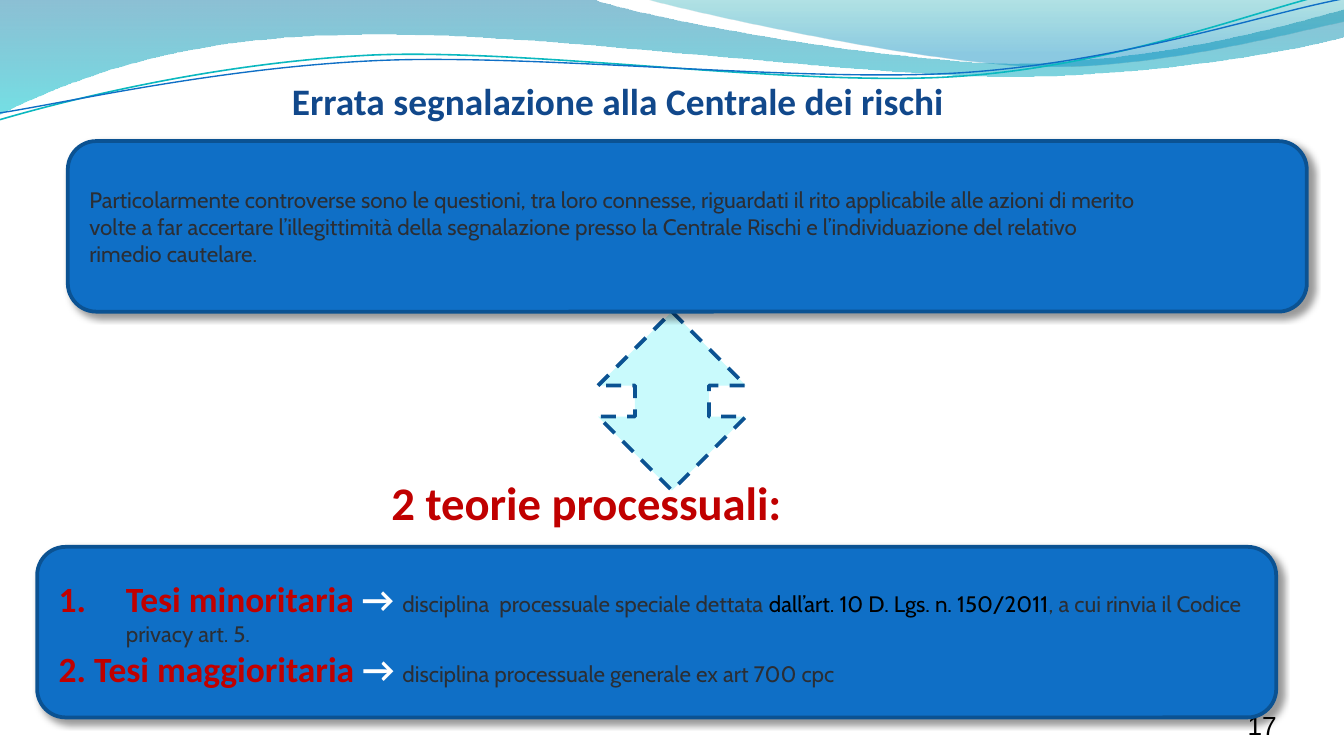
from lxml.etree import SubElement
from pptx import Presentation
from pptx.dml.color import RGBColor
from pptx.enum.dml import MSO_LINE
from pptx.enum.shapes import MSO_SHAPE
from pptx.enum.text import MSO_ANCHOR, PP_ALIGN
from pptx.oxml.ns import qn
from pptx.util import Pt

BLUE, NAVY, RED, GREY = "0F6FC6", "0B5292", "C00000", "2B2E34"
WHITE, BLACK = "FFFFFF", "000000"
WAVES = [
    ([(0, 0), (316.8, -0.7),
      (342.7, 9.4, 478.1, 33.8, 545.8, 33.8), (614.2, 33.8, 689.8, 13.7, 720, 5),
      (720.7, 19.4), (707.8, 23.8, 626.4, 41, 537.1, 41),
      (447.8, 40.3, 275, 15.1, 185, 18.7), (92.9, 19.4, 33.1, 44.6, -0.7, 61.2),
      (0, 0)],
     [(0, "0074A1", 45), (1, "00C6CF", 55)]),
    ([(344.9, -0.7), (366.5, 5.8, 491, 33.1, 553.7, 35.3),
      (616.3, 37.4, 691.9, 17.3, 720, 11.5), (720, 0), (344.9, -0.7)],
     [(0, "00A1A9", 30), (0.8, "008BBF", 45)]),
]
STRANDS = [
    ([(0, 64.1), (34.6, 54, 113.8, 33.8, 199.4, 29.5),
      (285.1, 25.9, 426.2, 46.8, 512.6, 41), (599.8, 35.3, 676.1, 4.3, 718.6, -5)],
     "0AB8BF", 0.85),
    ([(0, 60.5), (33.8, 55.4, 118.1, 36, 203.8, 32.4),
      (290.2, 28.8, 429.8, 44.6, 516.2, 38.9), (601.9, 33.1, 677.5, 7.2, 720, -0.7)],
     BLUE, 0.75),
]
INTRO = [
    "Particolarmente controverse sono le questioni, tra loro connesse, riguardati il rito applicabile alle azioni di merito",
    "volte a far accertare l’illegittimità della segnalazione presso la Centrale Rischi e l’individuazione del relativo",
    "rimedio cautelare.",
]
THESES = [
    [("Tesi minoritaria ", 19, "Calibri", RED, True), ("→", 19, "Calibri", WHITE, True),
     (" ", 20, "Cabin", GREY, False),
     ("disciplina  processuale speciale dettata ", 12, "Cabin", GREY, False),
     ("dall’art. 10 D. Lgs. n. 150/2011", 12, "Cabin", BLACK, False),
     (", a cui rinvia il Codice privacy art. 5.", 12, "Cabin", GREY, False)],
    [("2. Tesi maggioritaria ", 19, "Calibri", RED, True), ("→ ", 19, "Calibri", WHITE, True),
     ("disciplina processuale generale ex art 700 cpc", 12, "Cabin", GREY, False)],
]


def rgb(value):
    """Turn a hex string into a colour."""
    return RGBColor.from_string(value)


def add_outline(slide, pieces, left, top, close):
    """Build a freeform whose six-number pieces are cubic curves."""
    ends = [(Pt(left + piece[-2]), Pt(top + piece[-1])) for piece in pieces]
    builder = slide.shapes.build_freeform(*ends[0])
    builder.add_line_segments(ends[1:], close=close)
    s = builder.convert_to_shape()
    s.shadow.inherit = False
    segments = list(s._element.spPr.iter(qn("a:lnTo")))
    for segment, piece in zip(segments, pieces[1:]):
        if len(piece) == 6:
            segment.tag = qn("a:cubicBezTo")
            for i, (x, y) in enumerate([piece[:2], piece[2:4]]):
                pt = SubElement(segment, qn("a:pt"), x=str(Pt(left + x) - s.left),
                                y=str(Pt(top + y) - s.top))
                segment.insert(i, pt)
    return s


def add_header(slide, left, top):
    """Draw the translucent waves and the two thin strands."""
    for pieces, stops in WAVES:
        s = add_outline(slide, pieces, left, top, True)
        s.line.fill.background()
        s.fill.gradient()
        s.fill.gradient_angle = 270
        for stop, (pos, color, _) in zip(s.fill.gradient_stops, stops):
            stop.position = pos
            stop.color.rgb = rgb(color)
        for clr, (_, _, alpha) in zip(s._element.spPr.iter(qn("a:srgbClr")), stops):
            SubElement(clr, qn("a:alpha"), val=str(alpha * 1000))
    for pieces, color, width in STRANDS:
        s = add_outline(slide, pieces, left, top, False)
        s.fill.background()
        s.line.color.rgb = rgb(color)
        s.line.width = Pt(width)


def write(tf, paragraphs, align=PP_ALIGN.LEFT, anchor=MSO_ANCHOR.MIDDLE):
    """Fill a text frame with paragraphs of (text, size, font, colour, bold) runs."""
    tf.word_wrap = True
    tf.vertical_anchor = anchor
    for i, runs in enumerate(paragraphs):
        p = tf.add_paragraph() if i else tf.paragraphs[0]
        p.alignment = align
        for text, size, font, color, bold in runs:
            r = p.add_run()
            r.text = text
            r.font.size, r.font.name, r.font.bold = Pt(size), font, bold
            r.font.color.rgb = rgb(color)


def add_text(slide, box, run, align, anchor):
    """Add a text box holding a single run."""
    tf = slide.shapes.add_textbox(*map(Pt, box)).text_frame
    write(tf, [[run]], align, anchor)
    return tf


def add_shape(slide, kind, box, fill):
    """Add a filled preset shape with a navy outline."""
    s = slide.shapes.add_shape(kind, *map(Pt, box))
    s.shadow.inherit = False
    s.fill.solid()
    s.fill.fore_color.rgb = rgb(fill)
    s.line.color.rgb = rgb(NAVY)
    s.line.width = Pt(2)
    return s


def add_panel(slide, box, paragraphs):
    """Add a rounded blue panel with a soft shadow and text."""
    s = add_shape(slide, MSO_SHAPE.ROUNDED_RECTANGLE, box, BLUE)
    shadow = SubElement(s._element.spPr.find(qn("a:effectLst")), qn("a:outerShdw"),
                        blurRad=str(Pt(4)), dist=str(Pt(3)), dir="2700000",
                        algn="tl", rotWithShape="0")
    clr = SubElement(shadow, qn("a:srgbClr"), val=BLACK)
    SubElement(clr, qn("a:alpha"), val="40000")
    write(s.text_frame, paragraphs)
    return s.text_frame


def indent(p, left, first=0):
    """Set the left margin and first-line indent of a paragraph."""
    pPr = p._p.get_or_add_pPr()
    pPr.set("marL", str(Pt(left)))
    pPr.set("indent", str(Pt(first)))
    return pPr


def main():
    """Build and save the slide."""
    prs = Presentation()
    prs.slide_width, prs.slide_height = Pt(720), Pt(405)
    slide = prs.slides.add_slide(prs.slide_layouts[6])
    add_header(slide, 0, 0)

    arrow = add_shape(slide, MSO_SHAPE.UP_DOWN_ARROW, (320.4, 167, 79.2, 95.8), "C9FAFC")
    arrow.line.dash_style = MSO_LINE.DASH

    tf = add_text(slide, (624.2, 375.1, 59.8, 21.6), ("17", 14, "Arial", BLACK, False),
                  PP_ALIGN.RIGHT, MSO_ANCHOR.BOTTOM)
    tf.margin_left = tf.margin_right = tf.margin_top = tf.margin_bottom = 0

    tf = add_text(slide, (111.6, 253.8, 439.2, 42.5),
                  ("2 teorie processuali:", 25, "Calibri", RED, True),
                  PP_ALIGN.LEFT, MSO_ANCHOR.TOP)
    tf.paragraphs[0].line_spacing = 0.9
    indent(tf.paragraphs[0], 91)

    add_text(slide, (36.2, 20.2, 589.7, 67.7),
             ("Errata segnalazione alla Centrale dei rischi", 20, "Calibri", "11488B", True),
             PP_ALIGN.CENTER, MSO_ANCHOR.MIDDLE)

    add_panel(slide, (36.3, 75.6, 663.8, 91.4),
              [[(line, 12, "Cabin", GREY, False)] for line in INTRO])
    tf = add_panel(slide, (19.9, 293, 663.8, 91.4), THESES)
    pPr = indent(tf.paragraphs[0], 36, -36)
    SubElement(pPr, qn("a:buFont"), typeface="+mj-lt")
    SubElement(pPr, qn("a:buAutoNum"), type="arabicPeriod")

    prs.save("out.pptx")


if __name__ == "__main__":
    main()
